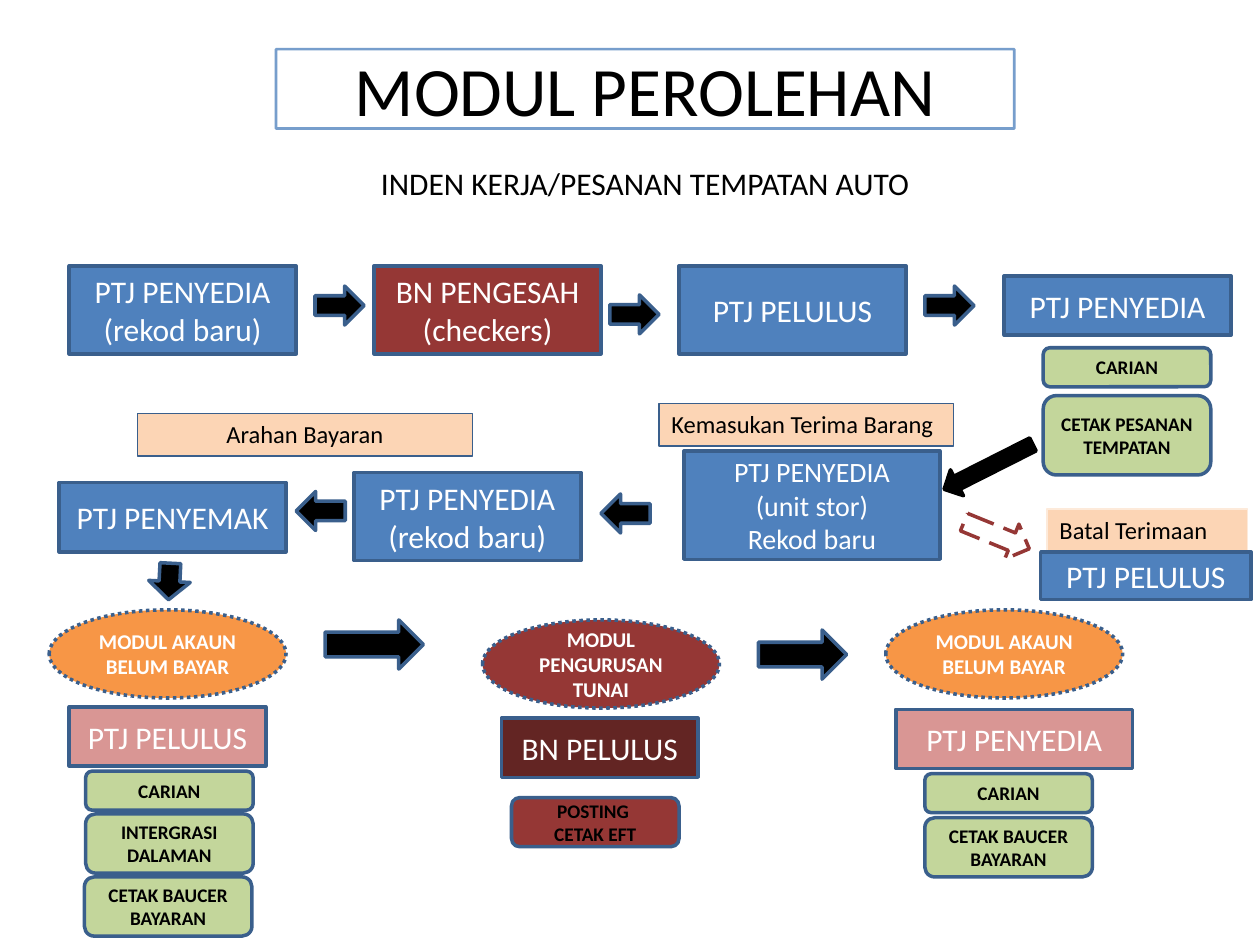
import pptx
import pptx.util
import pptx.dml.color
import pptx.enum.dml
import pptx.enum.shapes
import pptx.enum.text
import pptx.oxml
import pptx.oxml.ns

Inches = pptx.util.Inches
Pt = pptx.util.Pt
KINDS = pptx.enum.shapes.MSO_SHAPE
DASHES = pptx.enum.dml.MSO_LINE
ALIGN = pptx.enum.text.PP_ALIGN
ANCHOR = pptx.enum.text.MSO_ANCHOR

COLORS = {
    "black": "000000", "white": "FFFFFF", "blue": "4F81BD", "edge": "3A5F8C",
    "red": "953735", "maroon": "632523", "pink": "D99694", "orange": "F79646",
    "green": "C3D69B", "peach": "FCD5B5", "cream": "FDEADA",
}

TITLE = ("MODUL PEROLEHAN", (2.19, 0.39, 5.86, 0.63), 39.6, ANCHOR.MIDDLE)
SUBTITLE = ("INDEN KERJA/PESANAN TEMPATAN AUTO", (2.19, 1.25, 5.86, 0.4), 18, ANCHOR.TOP)

STYLES = {
    "role": dict(kind=KINDS.RECTANGLE, size=18, ink="white"),
    "store": dict(kind=KINDS.RECTANGLE, size=16, ink="white"),
    "module": dict(kind=KINDS.OVAL, size=12, ink="white", bold=True, dash=DASHES.ROUND_DOT),
    "task": dict(kind=KINDS.ROUNDED_RECTANGLE, size=11, ink="black", bold=True),
    "label": dict(kind=KINDS.RECTANGLE, size=14, ink="black", width=0.75, anchor=ANCHOR.TOP),
}

BOXES = [
    ("label", "peach", (5.23, 3.2, 2.34, 0.34), "Kemasukan Terima Barang", dict(align=ALIGN.LEFT)),
    ("role", "blue", (0.55, 2.11, 1.8, 0.7), "PTJ PENYEDIA\n(rekod baru)", {}),
    ("role", "red", (2.97, 2.11, 1.8, 0.7), "BN PENGESAH\n(checkers)", {}),
    ("role", "blue", (5.39, 2.11, 1.8, 0.7), "PTJ PELULUS", {}),
    ("role", "blue", (7.97, 2.19, 1.8, 0.47), "PTJ PENYEDIA", {}),
    ("task", "green", (8.28, 2.76, 1.33, 0.31), "CARIAN", {}),
    ("task", "green", (8.28, 3.14, 1.33, 0.63), "CETAK PESANAN TEMPATAN", {}),
    ("store", "blue", (5.43, 3.58, 2.03, 0.86), "PTJ PENYEDIA\n(unit stor)\nRekod baru", {}),
    ("role", "blue", (2.81, 3.75, 1.8, 0.7), "PTJ PENYEDIA\n(rekod baru)", {}),
    ("role", "blue", (0.47, 3.83, 1.8, 0.55), "PTJ PENYEMAK", {}),
    ("label", "peach", (1.09, 3.28, 2.66, 0.34), "Arahan Bayaran", {}),
    ("label", "peach", (8.31, 4.04, 1.59, 0.34), "Batal Terimaan",
     dict(align=ALIGN.LEFT, edge="cream")),
    ("role", "blue", (8.26, 4.38, 1.67, 0.38), "PTJ PELULUS", {}),
    ("module", "orange", (0.39, 4.84, 1.88, 0.7), "MODUL AKAUN BELUM BAYAR", {}),
    ("role", "pink", (0.55, 5.61, 1.56, 0.47), "PTJ PELULUS", {}),
    ("task", "green", (0.68, 6.12, 1.33, 0.31), "CARIAN", {}),
    ("task", "green", (0.68, 6.46, 1.33, 0.47), "INTERGRASI DALAMAN", {}),
    ("task", "green", (0.67, 6.96, 1.33, 0.47), "CETAK BAUCER BAYARAN", {}),
    ("module", "red", (3.83, 4.92, 1.88, 0.7), "MODUL PENGURUSAN TUNAI", {}),
    ("role", "maroon", (3.98, 5.7, 1.56, 0.47), "BN PELULUS", {}),
    ("task", "red", (4.06, 6.33, 1.33, 0.39), "POSTING \nCETAK EFT", {}),
    ("module", "orange", (7.03, 4.84, 1.88, 0.7), "MODUL AKAUN BELUM BAYAR", {}),
    ("role", "pink", (7.11, 5.63, 1.88, 0.47), "PTJ PENYEDIA", {}),
    ("task", "green", (7.34, 6.14, 1.33, 0.31), "CARIAN", {}),
    ("task", "green", (7.34, 6.49, 1.33, 0.47), "CETAK BAUCER BAYARAN", {}),
]

ARROWS = [
    ((2.5, 2.27, 0.39, 0.31), 0, {}),
    ((4.84, 2.34, 0.39, 0.31), 0, {}),
    ((7.34, 2.27, 0.39, 0.31), 0, {}),
    ((7.45, 3.59, 0.79, 0.23), 153.2, dict(edge="black")),
    ((7.63, 4.1, 0.56, 0.3), 22.2, dict(fill=None, edge="red", dash=DASHES.LONG_DASH)),
    ((4.77, 3.92, 0.39, 0.31), 180, {}),
    ((2.35, 3.9, 0.39, 0.31), 180, {}),
    ((1.2, 4.45, 0.29, 0.33), 92.9, {}),
    ((2.58, 4.92, 0.78, 0.39), 0, {}),
    ((6.02, 5, 0.7, 0.39), 0, {}),
]


def rgb(name):
    return pptx.dml.color.RGBColor.from_string(COLORS[name])


def write(shape, text, size, ink, bold=False, align=ALIGN.CENTER, anchor=ANCHOR.MIDDLE):
    frame = shape.text_frame
    frame.text = text
    frame.word_wrap = True
    frame.auto_size = pptx.enum.text.MSO_AUTO_SIZE.NONE
    frame.vertical_anchor = anchor
    for para in frame.paragraphs:
        para.alignment = align
        para.space_before = Pt(0)
        para.font.name = "Calibri"
        para.font.size = Pt(size)
        para.font.bold = bold
        para.font.color.rgb = rgb(ink)


def draw(page, kind, place, fill="black", edge="edge", width=2, dash=None):
    shape = page.shapes.add_shape(kind, *map(Inches, place))
    shape.shadow.inherit = False
    if fill:
        shape.fill.solid()
        shape.fill.fore_color.rgb = rgb(fill)
    else:
        shape.fill.background()
    shape.line.color.rgb = rgb(edge)
    shape.line.width = Pt(width)
    if dash:
        shape.line.dash_style = dash
    return shape


def fill_placeholder(holder, text, place, size, anchor):
    holder.left, holder.top, holder.width, holder.height = map(Inches, place)
    write(holder, text, size, "black", anchor=anchor)


def add_box(page, style, fill, place, text, changes):
    look = {**STYLES[style], **changes}
    outline = {key: look[key] for key in ("edge", "width", "dash") if key in look}
    lettering = {key: look[key] for key in ("size", "ink", "bold", "align", "anchor") if key in look}
    box = draw(page, look["kind"], place, fill, **outline)
    write(box, text, **lettering)


def main():
    deck = pptx.Presentation()
    deck.slide_width, deck.slide_height = Inches(10), Inches(7.5)
    page = deck.slides.add_slide(deck.slide_layouts[0])

    title = page.shapes.title
    fill_placeholder(title, *TITLE)
    title.line.color.rgb = rgb("blue")
    title.line.width = Pt(1.5)
    tint = title.line.fill._xPr.find(".//" + pptx.oxml.ns.qn("a:srgbClr"))
    tint.append(pptx.oxml.parse_xml(
        f'<a:alpha {pptx.oxml.ns.nsdecls("a")} val="76000"/>'))
    fill_placeholder(page.placeholders[1], *SUBTITLE)

    for box in BOXES:
        add_box(page, *box)
    for place, angle, look in ARROWS:
        draw(page, KINDS.RIGHT_ARROW, place, **look).rotation = angle

    deck.save("out.pptx")


if __name__ == "__main__":
    main()
